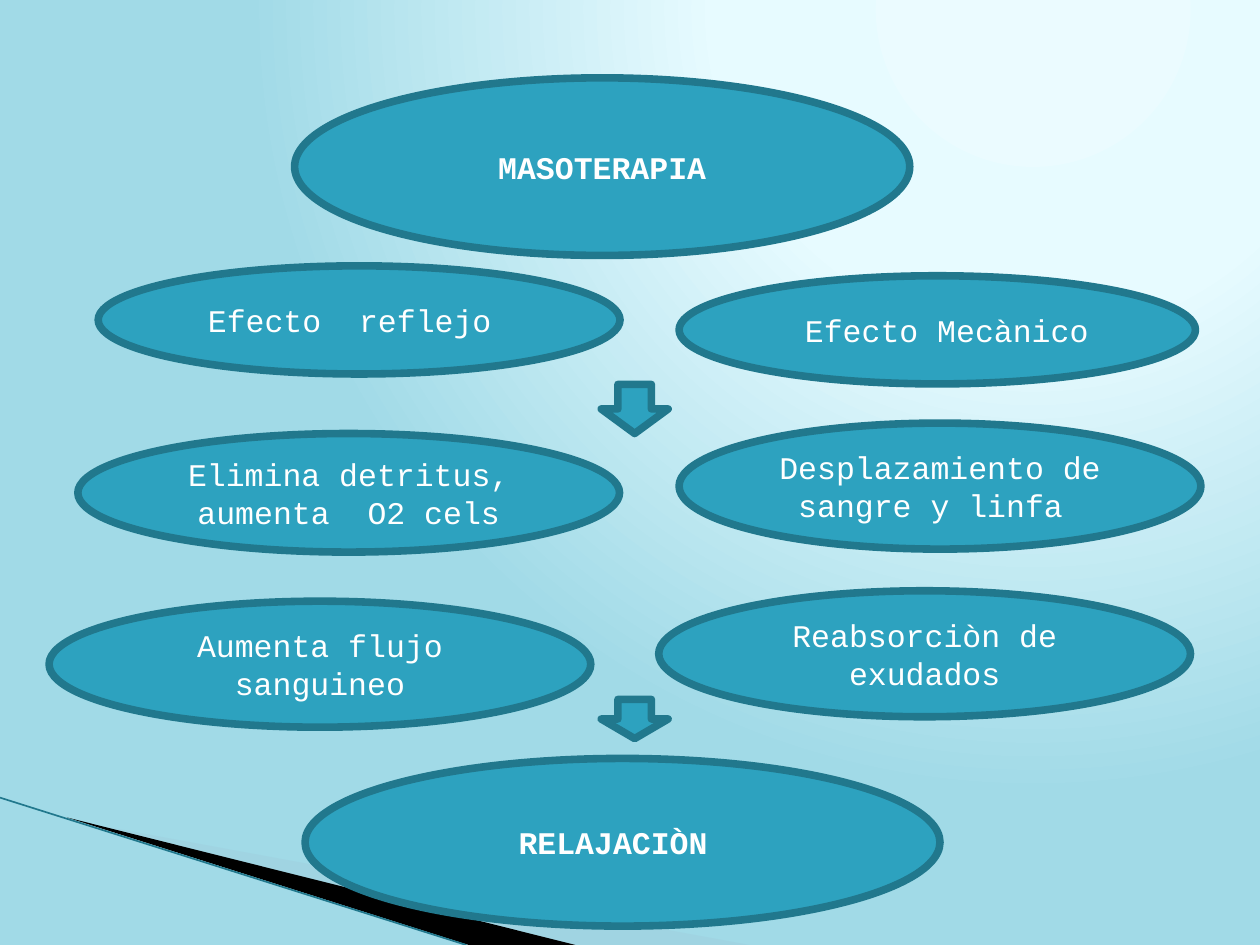
import dataclasses

import pptx
import pptx.dml.color
import pptx.enum.shapes
import pptx.enum.text
import pptx.oxml
import pptx.oxml.ns
import pptx.util

Cm = pptx.util.Cm
Pt = pptx.util.Pt
Preset = pptx.enum.shapes.MSO_SHAPE


@dataclasses.dataclass(frozen=True)
class Theme:
    font: str = "Courier New"
    text_size: float = 18
    text: str = "FFFFFF"
    fill: str = "2DA2BF"
    outline: str = "21788D"
    outline_width: float = 4.33
    edge_width: float = 0.95
    pale_wedge: str = "A0CBDC"
    dark_wedge: str = "000000"
    glow: tuple = ((0, "EBFBFF"), (40, "E7FBFF"), (100, "A1DAE7"))


def rgb(code):
    return pptx.dml.color.RGBColor.from_string(code)


class SlideBuilder:
    def __init__(self, slide, theme):
        self.slide = slide
        self.theme = theme

    def background(self):
        """Radial glow centred near the top right."""
        self.slide.background.fill.solid()
        stops = "".join(
            f'<a:gs pos="{position * 1000}"><a:srgbClr val="{color}"/></a:gs>'
            for position, color in self.theme.glow
        )
        gradient = pptx.oxml.parse_xml(
            f'<a:gradFill {pptx.oxml.ns.nsdecls("a")} rotWithShape="1">'
            f"<a:gsLst>{stops}</a:gsLst>"
            '<a:path path="circle">'
            '<a:fillToRect l="65000" t="0" r="0" b="98000"/>'
            "</a:path></a:gradFill>"
        )
        properties = self.slide.element.xpath(".//p:bgPr")[0]
        properties.replace(properties[0], gradient)

    def wedge(self, points, color, opacity=100):
        corners = [(Cm(x), Cm(y)) for x, y in points]
        outline = self.slide.shapes.build_freeform(*corners[0])
        outline.add_line_segments(corners[1:], close=True)
        shape = outline.convert_to_shape()
        shape.shadow.inherit = False
        shape.fill.solid()
        shape.fill.fore_color.rgb = rgb(color)
        shape.line.fill.background()
        if opacity < 100:
            fill_color = shape.element.xpath("./p:spPr/a:solidFill/a:srgbClr")[0]
            alpha = pptx.oxml.parse_xml(
                f'<a:alpha {pptx.oxml.ns.nsdecls("a")} val="{opacity * 1000}"/>'
            )
            fill_color.append(alpha)

    def edge(self, start, end):
        line = self.slide.shapes.add_connector(
            pptx.enum.shapes.MSO_CONNECTOR.STRAIGHT,
            *(Cm(value) for value in (*start, *end)),
        )
        line.line.color.rgb = rgb(self.theme.outline)
        line.line.width = Pt(self.theme.edge_width)
        effects = pptx.oxml.parse_xml(
            f'<a:effectLst {pptx.oxml.ns.nsdecls("a")}/>'
        )
        line.element.spPr.append(effects)

    def outlined(self, preset, box):
        shape = self.slide.shapes.add_shape(preset, *(Cm(value) for value in box))
        shape.shadow.inherit = False
        shape.fill.solid()
        shape.fill.fore_color.rgb = rgb(self.theme.fill)
        shape.line.color.rgb = rgb(self.theme.outline)
        shape.line.width = Pt(self.theme.outline_width)
        return shape

    def arrow(self, box):
        self.outlined(Preset.DOWN_ARROW, box)

    def bubble(self, text, box, bold=False):
        frame = self.outlined(Preset.OVAL, box).text_frame
        frame.word_wrap = True
        frame.vertical_anchor = pptx.enum.text.MSO_ANCHOR.MIDDLE
        frame.text = text
        paragraph = frame.paragraphs[0]
        paragraph.alignment = pptx.enum.text.PP_ALIGN.CENTER
        for run in paragraph.runs:
            run.font.name = self.theme.font
            run.font.size = Pt(self.theme.text_size)
            run.font.bold = bold
            run.font.color.rgb = rgb(self.theme.text)


def main():
    presentation = pptx.Presentation()
    presentation.slide_width = Cm(25.4)
    presentation.slide_height = Cm(19.05)
    blank_layout = presentation.slide_layouts[6]
    theme = Theme()
    builder = SlideBuilder(presentation.slides.add_slide(blank_layout), theme)

    builder.background()
    builder.wedge(
        [(1.4, 16.53), (15.11, 19.05), (11.58, 19.05)], theme.pale_wedge, opacity=40
    )
    builder.wedge([(1.35, 16.48), (11.6, 19.05), (9.45, 19.05)], theme.dark_wedge)
    builder.edge((0, 16.08), (9.4, 19.05))

    builder.bubble("MASOTERAPIA", (5.94, 1.57, 12.4, 3.58), bold=True)
    builder.bubble("RELAJACIÒN ", (6.15, 15.29, 12.8, 3.38), bold=True)

    effects = [
        ("Efecto  reflejo ", (1.98, 5.36, 10.52, 2.18)),
        (" Efecto Mecànico", (13.69, 5.56, 10.41, 2.18)),
        ("Elimina detritus, aumenta  O2 cels", (1.57, 8.74, 10.92, 2.39)),
        ("Desplazamiento de sangre y linfa ", (13.69, 8.53, 10.52, 2.54)),
        ("Aumenta flujo sanguineo", (0.99, 12.12, 10.92, 2.54)),
        ("Reabsorciòn de exudados", (13.28, 11.91, 10.72, 2.54)),
    ]
    for text, box in effects:
        builder.bubble(text, box)

    for top, height in ((7.75, 0.99), (14.1, 0.79)):
        builder.arrow((12.12, top, 1.35, height))

    presentation.save("out.pptx")


if __name__ == "__main__":
    main()
